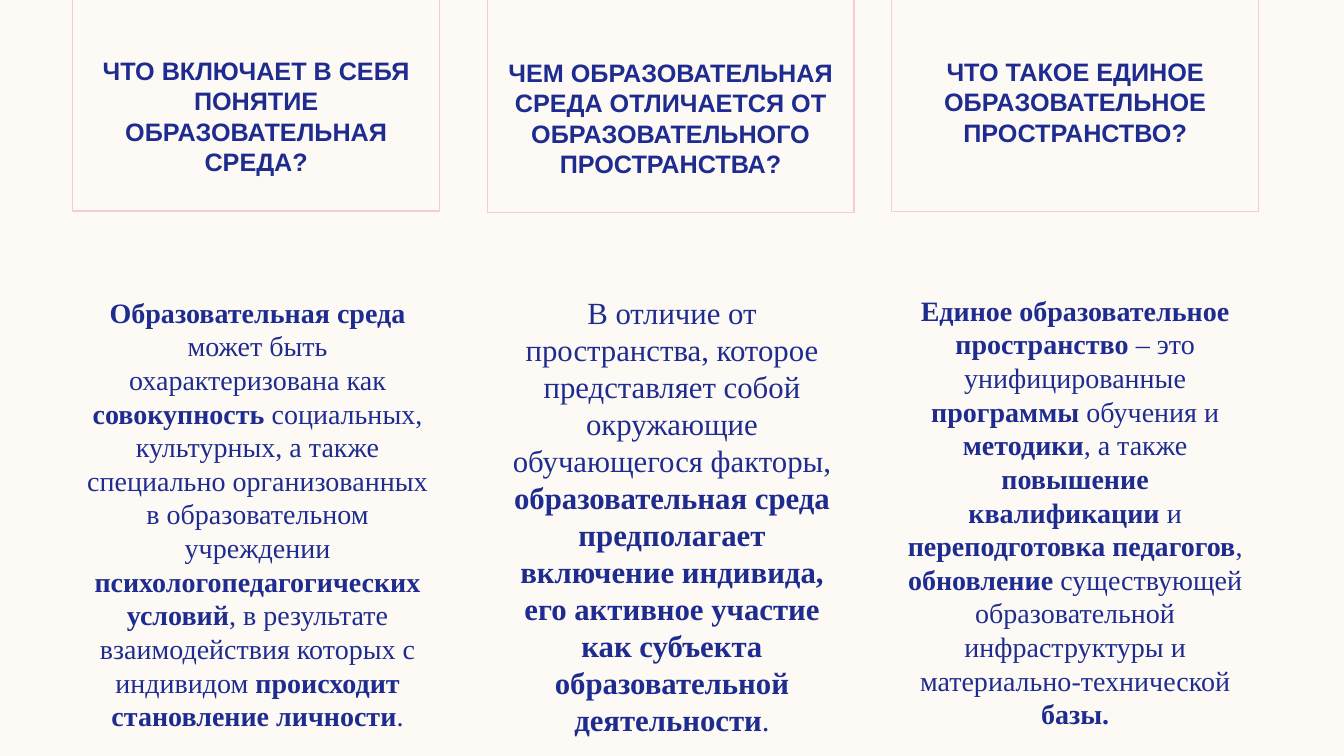
"""Build a slide with three questions and answers about the educational environment."""
import pptx
import pptx.dml.color
import pptx.enum.shapes
import pptx.enum.text
import pptx.util

Pt = pptx.util.Pt
RGB = pptx.dml.color.RGBColor
CREAM = RGB(0xFD, 0xFA, 0xF6)
PINK = RGB(0xF5, 0xCD, 0xCE)
NAVY = RGB(0x1F, 0x2C, 0x8F)

COLUMNS = [
    {
        "head": [("ЧТО ВКЛЮЧАЕТ В СЕБЯ ПОНЯТИЕ ОБРАЗОВАТЕЛЬНАЯ СРЕДА?", True)],
        "frame": (52, -14.4, 262, 165),
        "body": [
            ("Образовательная среда", True),
            (" может быть охарактеризована как ", False),
            ("совокупность", True),
            (" социальных, культурных, а также специально организованных"
             " в образовательном учреждении ", False),
            ("психологопедагогических условий", True),
            (", в результате взаимодействия которых с индивидом ", False),
            ("происходит становление личности", True),
            (".", False),
        ],
        "area": (54, 207.4, 260, 324),
        "size": 20,
    },
    {
        "head": [("ЧЕМ ОБРАЗОВАТЕЛЬНАЯ СРЕДА ОТЛИЧАЕТСЯ ОТ"
                  " ОБРАЗОВАТЕЛЬНОГО ПРОСТРАНСТВА?", True)],
        "frame": (348, -13, 262, 165),
        "body": [
            ("В отличие от пространства, которое представляет собой"
             " окружающие обучающегося факторы, ", False),
            ("образовательная среда предполагает включение индивида,"
             " его активное участие как субъекта образовательной"
             " деятельности", True),
            (".", False),
        ],
        "area": (350, 206.6, 260, 293),
        "size": 22,
    },
    {
        "head": [("ЧТО ТАКОЕ ЕДИНОЕ ОБРАЗОВАТЕЛЬНОЕ ПРОСТРАНСТВО?", True)],
        "frame": (637, -13.7, 262, 165),
        "body": [
            ("Единое образовательное пространство", True),
            (" – это унифицированные ", False),
            ("программы", True),
            (" обучения и ", False),
            ("методики", True),
            (", а также ", False),
            ("повышение квалификации ", True),
            ("и ", False),
            ("переподготовка педагогов", True),
            (", ", False),
            ("обновление", True),
            (" существующей образовательной инфраструктуры"
             " и материально-технической ", False),
            ("базы.", True),
        ],
        "area": (638, 206, 260, 293),
        "size": 20,
    },
]


def write(shape, runs, font, size, top):
    """Fill a shape with one centred paragraph of plain and bold runs."""
    frame = shape.text_frame
    frame.word_wrap = True
    frame.vertical_anchor = pptx.enum.text.MSO_ANCHOR.TOP
    frame.margin_left = frame.margin_right = Pt(7.2)
    frame.margin_top, frame.margin_bottom = Pt(top), Pt(3.6)
    para = frame.paragraphs[0]
    para.alignment = pptx.enum.text.PP_ALIGN.CENTER
    para.line_spacing = Pt(size * 1.2)
    for text, bold in runs:
        run = para.add_run()
        run.text = text
        run.font.name, run.font.size, run.font.bold = font, Pt(size), bold
        run.font.color.rgb = NAVY


def main():
    """Draw the columns and save the deck."""
    deck = pptx.Presentation()
    deck.slide_width, deck.slide_height = Pt(960), Pt(540)
    slide = deck.slides.add_slide(deck.slide_layouts[6])
    slide.background.fill.solid()
    slide.background.fill.fore_color.rgb = CREAM
    for col in COLUMNS:
        card = slide.shapes.add_shape(
            pptx.enum.shapes.MSO_SHAPE.RECTANGLE, *map(Pt, col["frame"]))
        card.shadow.inherit = False
        card.fill.background()
        card.line.color.rgb = PINK
        card.line.width = Pt(1)
        write(card, col["head"], "Arial", 18, 54)
        note = slide.shapes.add_textbox(*map(Pt, col["area"]))
        write(note, col["body"], "Times New Roman", col["size"], 3.6)
    deck.save("out.pptx")


if __name__ == "__main__":
    main()
